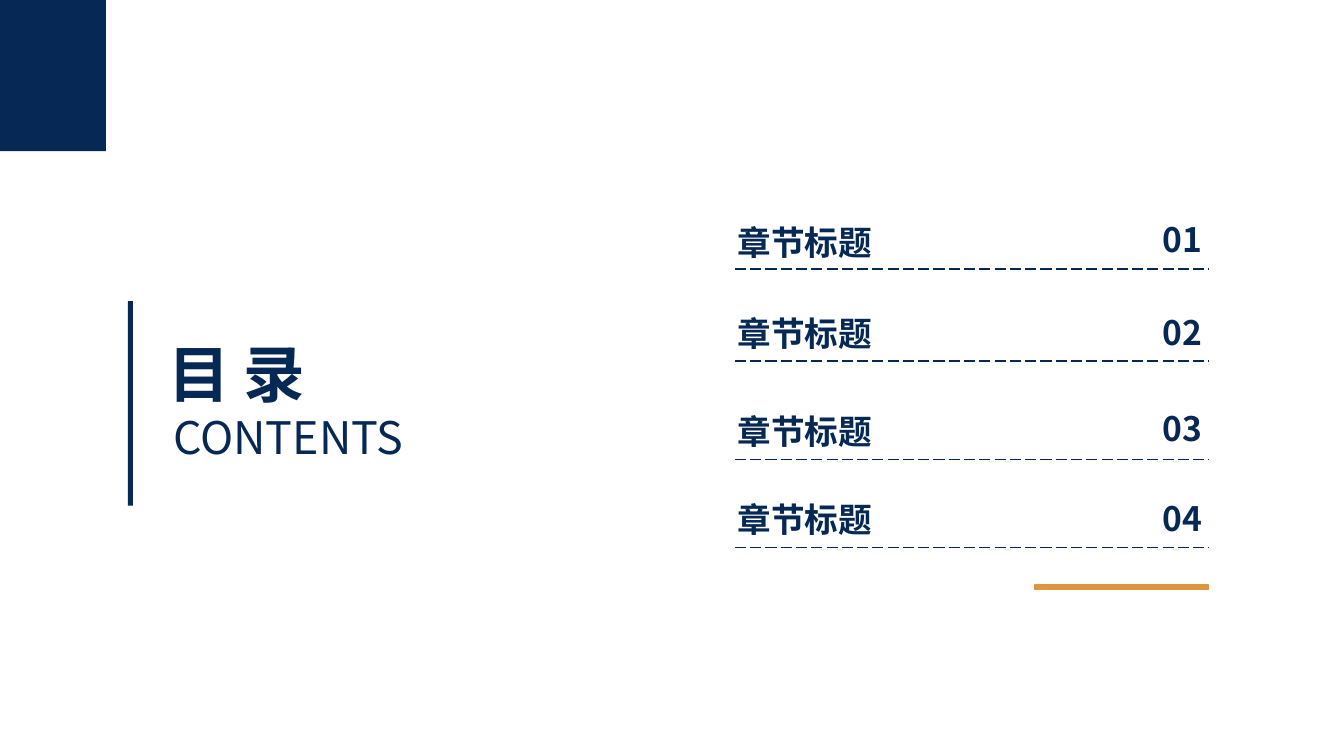
from dataclasses import dataclass

from lxml.etree import SubElement
from pptx import Presentation
from pptx.dml.color import RGBColor
from pptx.enum.dml import MSO_LINE
from pptx.enum.shapes import MSO_CONNECTOR, MSO_SHAPE
from pptx.enum.text import MSO_AUTO_SIZE, PP_ALIGN
from pptx.oxml.ns import qn
from pptx.slide import Slide
from pptx.util import Pt


@dataclass(frozen=True)
class Theme:
    navy: RGBColor = RGBColor.from_string("062855")
    orange: RGBColor = RGBColor.from_string("DE9640")
    font: str = "Noto Sans CJK SC"
    heading: int = 44
    subheading: int = 32
    entry: int = 24


@dataclass(frozen=True)
class Box:
    left: float
    top: float
    width: float
    height: float

    def emu(self) -> tuple[Pt, ...]:
        return tuple(Pt(v) for v in (self.left, self.top, self.width, self.height))


@dataclass(frozen=True)
class Entry:
    title: str
    title_top: float
    number_top: float
    rule_y: float
    title_width: float = 125.3


THEME = Theme()
WIDE_INSETS = (7.2, 3.6)
TIGHT_INSETS = (3.6, 2.16)
TITLE_LEFT, NUMBER_LEFT = 519.8, 823
RULE_LEFT, RULE_RIGHT = 524.9, 863.3

ENTRIES = (
    Entry("章节标题", 154.8, 154.1, 192.2),
    Entry("章节标题", 220.3, 221, 257.8),
    Entry("章节标题", 290.2, 289.4, 328.3, title_width=133.9),
    Entry("章节标题", 352.8, 353.5, 391),
)


def add_text(s: Slide, box: Box, text: str, size: int, bold: bool = True,
             insets: tuple[float, float] = WIDE_INSETS,
             align: PP_ALIGN = PP_ALIGN.LEFT) -> None:
    tf = s.shapes.add_textbox(*box.emu()).text_frame
    x, y = (Pt(v) for v in insets)
    frame_format = {
        "word_wrap": True, "auto_size": MSO_AUTO_SIZE.SHAPE_TO_FIT_TEXT,
        "margin_left": x, "margin_right": x, "margin_top": y, "margin_bottom": y,
    }
    for name, value in frame_format.items():
        setattr(tf, name, value)
    p = tf.paragraphs[0]
    p.alignment = align
    r = p.add_run()
    r.text = text
    for name, value in {"name": THEME.font, "size": Pt(size), "bold": bold}.items():
        setattr(r.font, name, value)
    r.font.color.rgb = THEME.navy
    SubElement(r._r.get_or_add_rPr(), qn("a:ea"), typeface=THEME.font)


def add_bar(s: Slide, box: Box, color: RGBColor, outlined: bool = False) -> None:
    sp = s.shapes.add_shape(MSO_SHAPE.RECTANGLE, *box.emu())
    sp.shadow.inherit = False
    sp.fill.solid()
    sp.fill.fore_color.rgb = color
    if outlined:
        sp.line.color.rgb = color
        sp.line.width = Pt(1)
    else:
        sp.line.fill.background()


def add_rule(s: Slide, y: float) -> None:
    rule = s.shapes.add_connector(
        MSO_CONNECTOR.STRAIGHT, Pt(RULE_LEFT), Pt(y), Pt(RULE_RIGHT), Pt(y))
    rule.line.color.rgb = THEME.navy
    rule.line.width = Pt(1)
    rule.line.dash_style = MSO_LINE.LONG_DASH
    SubElement(rule._element.spPr, qn("a:effectLst"))


def add_entry(s: Slide, number: int, entry: Entry) -> None:
    add_text(s, Box(TITLE_LEFT, entry.title_top, entry.title_width, 36),
             entry.title, THEME.entry)
    add_text(s, Box(NUMBER_LEFT, entry.number_top, 39.6, 33.1), f"{number:02}",
             THEME.entry, insets=TIGHT_INSETS, align=PP_ALIGN.RIGHT)
    add_rule(s, entry.rule_y)


def main() -> None:
    prs = Presentation()
    prs.slide_width, prs.slide_height = Pt(960), Pt(540)
    s = prs.slides.add_slide(prs.slide_layouts[6])

    add_text(s, Box(116.6, 237.6, 109.4, 56.9), "目 录", THEME.heading,
             insets=TIGHT_INSETS)
    add_text(s, Box(116.6, 289.4, 241.2, 46), "CONTENTS", THEME.subheading, bold=False)
    for number, entry in enumerate(ENTRIES, 1):
        add_entry(s, number, entry)

    add_bar(s, Box(91.4, 215.1, 3.6, 146.2), THEME.navy)
    add_bar(s, Box(0, 0, 75.6, 108), THEME.navy)
    add_bar(s, Box(739.3, 417.5, 124, 3.6), THEME.orange, outlined=True)
    prs.save("out.pptx")


if __name__ == "__main__":
    main()
